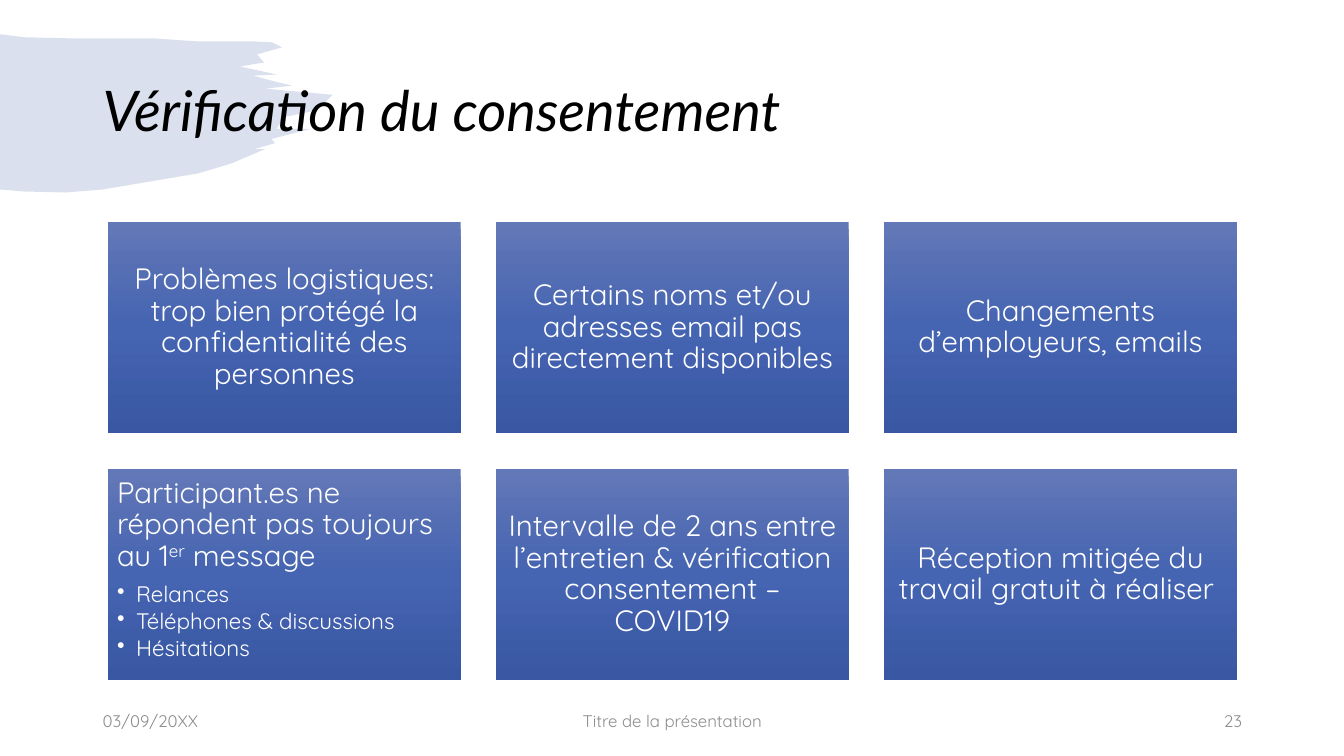
from copy import deepcopy

from pptx import Presentation
from pptx.dml.color import RGBColor
from pptx.enum.shapes import MSO_SHAPE
from pptx.enum.text import MSO_ANCHOR, PP_ALIGN
from pptx.oxml.ns import qn
from pptx.oxml.xmlchemy import OxmlElement
from pptx.util import Cm, Pt

RECTANGLE = MSO_SHAPE.RECTANGLE
TOP, MIDDLE = MSO_ANCHOR.TOP, MSO_ANCHOR.MIDDLE
LEFT, CENTER, RIGHT = PP_ALIGN.LEFT, PP_ALIGN.CENTER, PP_ALIGN.RIGHT

COLORS = {
    "brush": "4A66AC", "title": "000000", "footer": "8C8C8C", "card_text": "FFFFFF",
    "card_top": "6378B7", "card_middle": "4564B1", "card_bottom": "3957A2",
}
TITLE_FONT, BODY_FONT = "Lato", "Quicksand"

# Brush stroke outline in hundredths of an inch
BRUSH_UNIT = Cm(2.54) / 100
BRUSH_POINTS = [
    (0, 34), (25, 37), (66, 38), (151, 38), (194, 41), (248, 41), (270, 42), (280, 47),
    (255, 54), (262, 62), (238, 66), (275, 74), (251, 75), (273, 81), (290, 85),
    (263, 88), (330, 94), (318, 106), (307, 111), (283, 116), (274, 128), (308, 128),
    (269, 138), (273, 142), (252, 148), (263, 148), (230, 162), (197, 172),
    (102, 188), (65, 191), (23, 190), (0, 188),
]

CARDS = [
    "Problèmes logistiques: trop bien protégé la confidentialité des personnes",
    "Certains noms et/ou adresses email pas directement disponibles",
    "Changements d’employeurs, emails",
    [("Participant.es ne répondent pas toujours au 1", False), ("er", True), (" message", False)],
    "Intervalle de 2 ans entre l’entretien & vérification consentement – COVID19",
    "Réception mitigée du travail gratuit à réaliser ",
]
FOLLOW_UPS = ["Relances", "Téléphones & discussions", "Hésitations"]
FOOTERS = [
    ("03/09/20XX", 2.34, 7.62, LEFT),
    ("Titre de la présentation", 11.23, 11.43, CENTER),
    ("23", 23.93, 7.62, RIGHT),
]


class SlideBuilder:
    def __init__(self, slide):
        self.slide = slide

    def color(self, name):
        return RGBColor.from_string(COLORS[name])

    def style(self, paragraph, size, color, font=BODY_FONT, align=LEFT, spacing=1.0, after=0):
        paragraph.alignment = align
        paragraph.line_spacing = spacing
        paragraph.space_after = Pt(after)
        paragraph.font.name = font
        paragraph.font.size = Pt(size)
        paragraph.font.color.rgb = self.color(color)

    def brush(self):
        builder = self.slide.shapes.build_freeform(*BRUSH_POINTS[0], scale=BRUSH_UNIT)
        builder.add_line_segments(BRUSH_POINTS[1:], close=True)
        shape = builder.convert_to_shape()
        shape.shadow.inherit = False
        shape.line.fill.background()
        shape.fill.solid()
        shape.fill.fore_color.rgb = self.color("brush")
        alpha = OxmlElement("a:alpha")
        alpha.set("val", "20000")
        shape._element.spPr.find(qn("a:solidFill"))[0].append(alpha)

    def text(self, text, left, top, width, height, **style):
        box = self.slide.shapes.add_textbox(Cm(left), Cm(top), Cm(width), Cm(height))
        frame = box.text_frame
        frame.word_wrap = True
        frame.vertical_anchor = MIDDLE
        paragraph = frame.paragraphs[0]
        paragraph.text = text
        self.style(paragraph, **style)
        return paragraph

    def gradient(self, shape):
        shape.fill.gradient()
        stop_list = shape._element.spPr.find(qn("a:gradFill")).find(qn("a:gsLst"))
        stop_list.append(deepcopy(stop_list[-1]))
        shape.fill.gradient_angle = 270
        names = ("card_top", "card_middle", "card_bottom")
        for index, (stop, name) in enumerate(zip(shape.fill.gradient_stops, names)):
            stop.position = index / 2
            stop.color.rgb = self.color(name)

    def card(self, content, left, top, width, height, bullets=()):
        shape = self.slide.shapes.add_shape(RECTANGLE, Cm(left), Cm(top), Cm(width), Cm(height))
        shape.shadow.inherit = False
        shape.line.fill.background()
        self.gradient(shape)
        frame = shape.text_frame
        frame.word_wrap = True
        frame.margin_left = frame.margin_right = Cm(0.23)
        frame.margin_top = frame.margin_bottom = Cm(0.23)
        frame.vertical_anchor = TOP if bullets else MIDDLE
        paragraph = frame.paragraphs[0]
        for text, raised in [(content, False)] if isinstance(content, str) else content:
            run = paragraph.add_run()
            run.text = text
            if raised:
                run.font._element.set("baseline", "30000")
        self.style(paragraph, 21, "card_text", align=LEFT if bullets else CENTER,
                   spacing=0.9, after=7.35)
        for text in bullets:
            self.bullet(frame.add_paragraph(), text)

    def bullet(self, paragraph, text):
        paragraph.text = text
        paragraph.level = 1
        self.style(paragraph, 16, "card_text", spacing=0.9, after=2)
        properties = paragraph._element.get_or_add_pPr()
        properties.set("marL", str(Cm(0.48)))
        properties.set("indent", str(-Cm(0.48)))
        mark = OxmlElement("a:buChar")
        mark.set("char", "•")
        properties.find(qn("a:defRPr")).addprevious(mark)


def main():
    presentation = Presentation()
    presentation.slide_width, presentation.slide_height = Cm(33.87), Cm(19.05)
    builder = SlideBuilder(presentation.slides.add_slide(presentation.slide_layouts[6]))

    # Heading
    builder.brush()
    title = builder.text("Vérification du consentement", 2.34, 1.02, 29.21, 3.68,
                         size=40, color="title", font=TITLE_FONT, spacing=0.9)
    title.font.italic = True

    # Footer
    for text, left, width, align in FOOTERS:
        builder.text(text, left, 17.65, width, 1.02,
                     size=12, color="footer", align=align, after=6)

    # Cards, three to a row
    for index, content in enumerate(CARDS):
        row, column = divmod(index, 3)
        builder.card(content, 2.72 + 9.78 * column, 5.59 + 6.22 * row, 8.89, 5.33,
                     bullets=FOLLOW_UPS if index == 3 else ())

    presentation.save("out.pptx")


if __name__ == "__main__":
    main()
